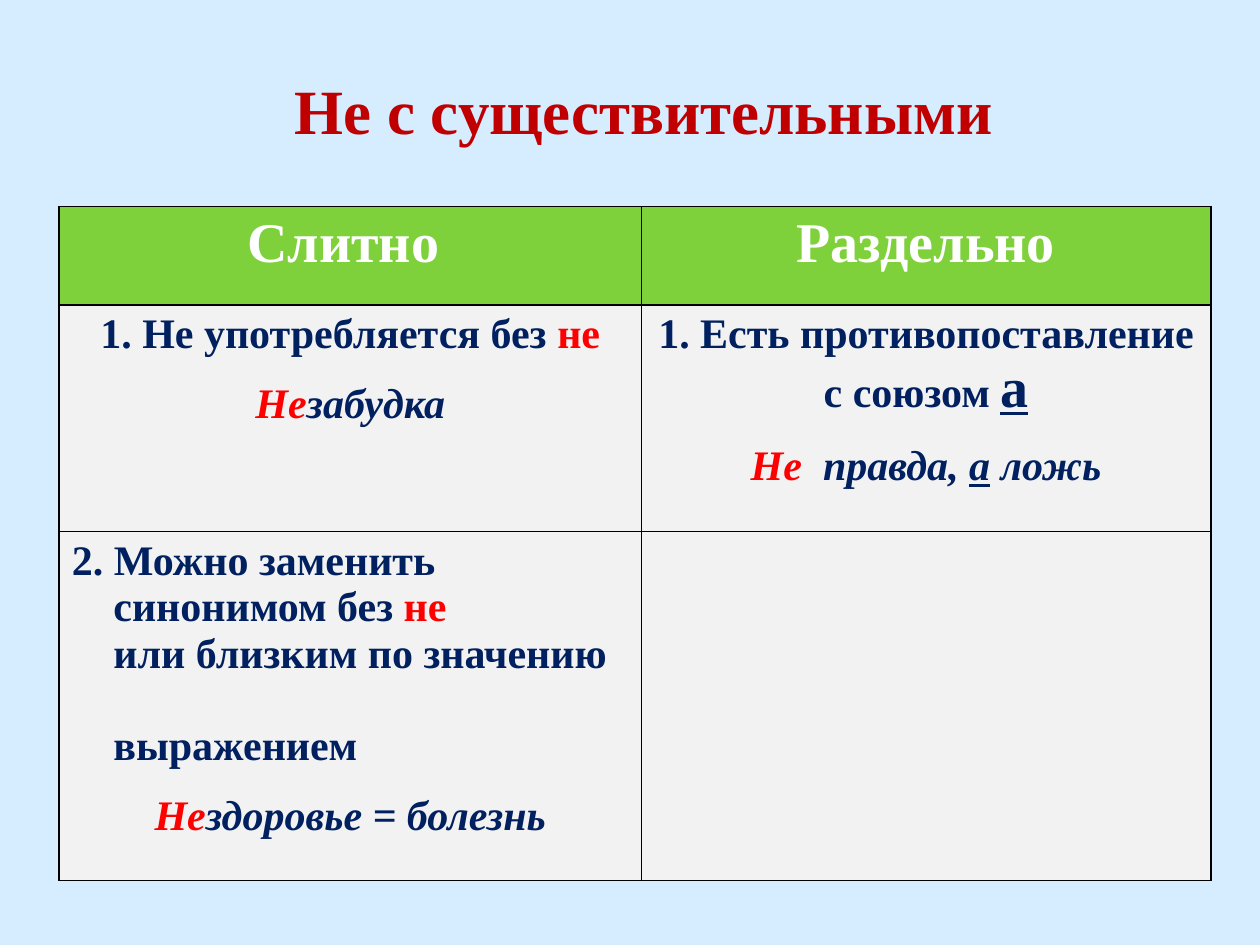
from pptx import Presentation
from pptx.dml.color import RGBColor
from pptx.enum.text import MSO_ANCHOR, MSO_AUTO_SIZE, PP_ALIGN
from pptx.oxml import parse_xml
from pptx.oxml.ns import nsdecls
from pptx.util import Inches, Pt

COLORS = {
    "background": "D6ECFF", "title": "C00000", "header": "7FD13B",
    "body": "F2F2F2", "white": "FFFFFF", "navy": "002060",
    "red": "FF0000", "border": "000000",
}
CENTER, LEFT = PP_ALIGN.CENTER, PP_ALIGN.LEFT
EXAMPLE_GAP = 13.5
HANGING = 0.33


def add_run(paragraph, text, color, size=24, italic=False, underline=False):
    run = paragraph.add_run()
    run.text = text
    font = run.font
    font.name = "Times New Roman"
    font.size = Pt(size)
    font.bold = True
    font.italic = italic
    font.underline = underline
    font.color.rgb = RGBColor.from_string(COLORS[color])


def style_cell(cell, fill):
    """Give the cell thin borders on all sides and a plain fill."""
    properties = cell._tc.get_or_add_tcPr()
    for side in "LRTB":
        properties.append(parse_xml(
            f'<a:ln{side} {nsdecls("a")} w="12700"><a:solidFill>'
            f'<a:srgbClr val="{COLORS["border"]}"/></a:solidFill></a:ln{side}>'))
    cell.fill.solid()
    cell.fill.fore_color.rgb = RGBColor.from_string(COLORS[fill])


prs = Presentation()
prs.slide_width, prs.slide_height = Inches(10), Inches(7.5)
slide = prs.slides.add_slide(prs.slide_layouts[5])
slide.background.fill.solid()
slide.background.fill.fore_color.rgb = RGBColor.from_string(COLORS["background"])

title = slide.shapes.title
title.left, title.top = Inches(0.86), Inches(0.7)
title.width, title.height = Inches(8.5), Inches(0.86)
heading = title.text_frame
heading.auto_size = MSO_AUTO_SIZE.NONE
heading.vertical_anchor = MSO_ANCHOR.MIDDLE
heading.margin_bottom = Inches(0.58)
heading.paragraphs[0].alignment = CENTER
add_run(heading.paragraphs[0], "Не с существительными", "title", 36)

# Each paragraph: alignment, space before (pt), left indent (in), runs
rows = [
    [
        [(CENTER, 0, 0, [("Слитно ", "white", 32)])],
        [(CENTER, 0, 0, [("Раздельно", "white", 32)])],
    ],
    [
        [
            (CENTER, 0, 0, [("1. Не употребляется без ", "navy"), ("не", "red")]),
            (CENTER, EXAMPLE_GAP, 0, [("Не", "red", 24, True),
                                      ("забудка", "navy", 24, True)]),
        ],
        [
            (CENTER, 0, 0, [("1. Есть противопоставление с союзом ", "navy"),
                            ("а", "navy", 32, False, True)]),
            (CENTER, EXAMPLE_GAP, 0, [("Не", "red", 24, True),
                                      ("  правда, ", "navy", 24, True),
                                      ("а", "navy", 24, True, True),
                                      (" ложь", "navy", 24, True)]),
        ],
    ],
    [
        [
            (LEFT, 0, 0, [("2. Можно заменить", "navy")]),
            (LEFT, 0, HANGING, [("синонимом без ", "navy"), ("не", "red")]),
            (LEFT, 0, HANGING, [("или близким по значению", "navy")]),
            (LEFT, 26, HANGING, [("выражением", "navy")]),
            (CENTER, EXAMPLE_GAP, 0, [("Не", "red", 24, True),
                                      ("здоровье = болезнь", "navy", 24, True)]),
        ],
        [],
    ],
]

rules = slide.shapes.add_table(
    3, 2, Inches(0.47), Inches(1.64), Inches(9.14), Inches(5.35)).table
for column, width in zip(rules.columns, (4.62, 4.52)):
    column.width = Inches(width)
for row, height in zip(rules.rows, (0.78, 1.8, 2.77)):
    row.height = Inches(height)

for r, row in enumerate(rows):
    for c, paragraphs in enumerate(row):
        cell = rules.cell(r, c)
        style_cell(cell, "body" if r else "header")
        frame = cell.text_frame
        for i, (alignment, gap, indent, runs) in enumerate(paragraphs):
            paragraph = frame.add_paragraph() if i else frame.paragraphs[0]
            paragraph.alignment = alignment
            paragraph.space_before = Pt(gap)
            if indent:
                paragraph._p.get_or_add_pPr().set("marL", str(Inches(indent)))
            for run in runs:
                add_run(paragraph, *run)

prs.save("out.pptx")
